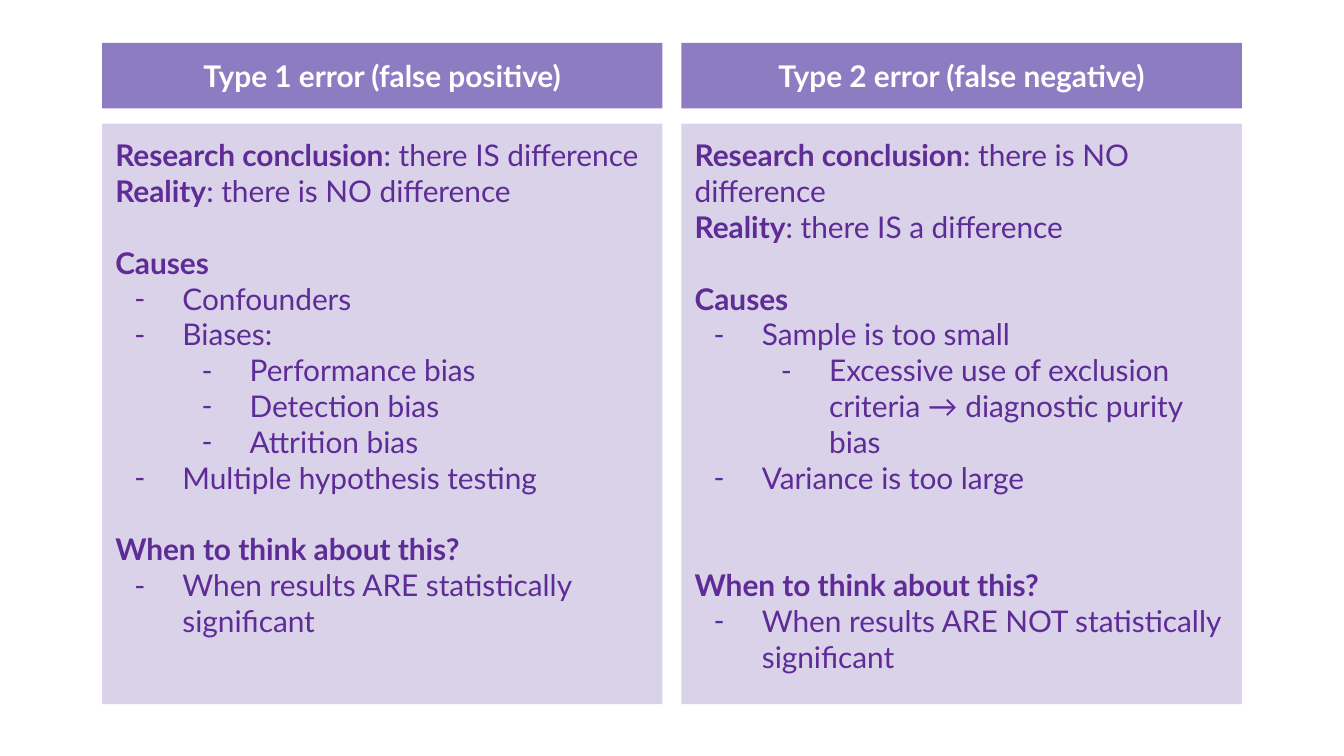
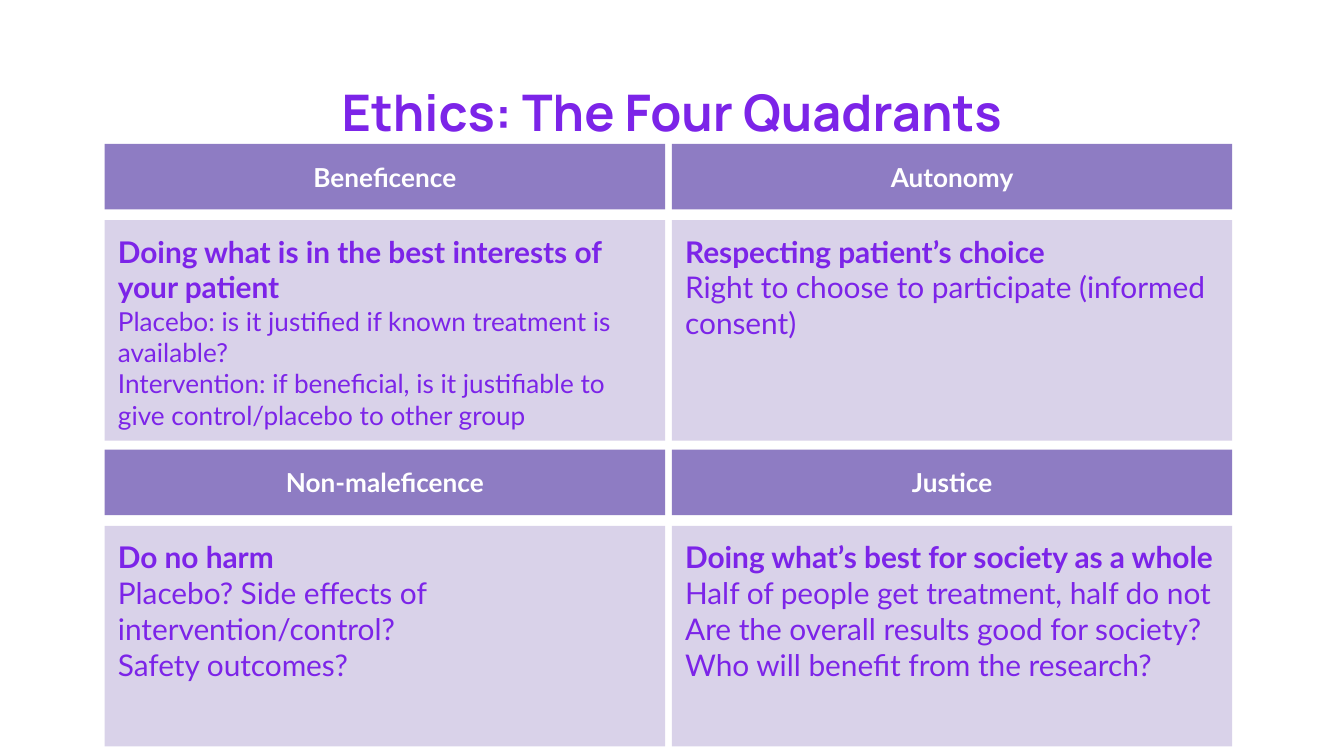
"""Builds two slides of paired panels: error types and ethics quadrants."""
from dataclasses import dataclass

from lxml.etree import SubElement
from pptx import Presentation
from pptx.dml.color import RGBColor
from pptx.enum.shapes import MSO_SHAPE as Preset
from pptx.enum.text import MSO_ANCHOR as Anchor, MSO_AUTO_SIZE as AutoSize, PP_ALIGN as Align
from pptx.oxml.ns import qn
from pptx.util import Cm, Pt

COLORS = {
    "band": "8E7CC3",
    "body": "D9D2E9",
    "white": "FFFFFF",
    "deep": "5E2B97",
    "bright": "7C24E8",
}
BODY_FONT, TITLE_FONT = "Lato", "Manrope"
PANEL_WIDTH, BAND_HEIGHT, INSET = 10.59, 1.24, 0.25
INDENT, HANGING = 1.27, 0.91
BLANK_LINE = 19.2


@dataclass(frozen=True)
class Line:
    bold: str = ""
    plain: str = ""
    bullet_level: int = 0
    lines_before: int = 0
    size: int = 16


@dataclass(frozen=True)
class Panel:
    heading: str
    lines: tuple[Line, ...]


@dataclass(frozen=True)
class Grid:
    left: float
    top: float
    column_step: float
    row_step: float
    body_offset: float
    body_height: float
    heading_size: int
    text_color: str


ERROR_GRID = Grid(1.93, 0.81, 10.95, 0, 1.53, 10.97, 16, "deep")
ETHICS_GRID = Grid(1.98, 2.72, 10.72, 5.78, 1.44, 4.17, 14, "bright")

ERROR_PANELS = (
    Panel("Type 1 error (false positive)", (
        Line("Research conclusion", ": there IS difference"),
        Line("Reality", ": there is NO difference"),
        Line("Causes", lines_before=1),
        Line(plain="Confounders", bullet_level=1),
        Line(plain="Biases:", bullet_level=1),
        Line(plain="Performance bias", bullet_level=2),
        Line(plain="Detection bias", bullet_level=2),
        Line(plain="Attrition bias", bullet_level=2),
        Line(plain="Multiple hypothesis testing", bullet_level=1),
        Line("When to think about this?", lines_before=1),
        Line(plain="When results ARE statistically significant", bullet_level=1),
    )),
    Panel("Type 2 error (false negative)", (
        Line("Research conclusion", ": there is NO difference"),
        Line("Reality", ": there IS a difference"),
        Line("Causes", lines_before=1),
        Line(plain="Sample is too small", bullet_level=1),
        Line(plain="Excessive use of exclusion criteria → diagnostic purity bias", bullet_level=2),
        Line(plain="Variance is too large", bullet_level=1),
        Line("When to think about this?", lines_before=2),
        Line(plain="When results ARE NOT statistically significant", bullet_level=1),
    )),
)

ETHICS_PANELS = (
    Panel("Beneficence", (
        Line("Doing what is in the best interests of your patient"),
        Line(plain="Placebo: is it justified if known treatment is available?", size=14),
        Line(plain="Intervention: if beneficial, is it justifiable to give "
                   "control/placebo to other group", size=14),
    )),
    Panel("Autonomy", (
        Line("Respecting patient’s choice"),
        Line(plain="Right to choose to participate (informed consent)"),
    )),
    Panel("Non-maleficence", (
        Line("Do no harm"),
        Line(plain="Placebo? Side effects of intervention/control?"),
        Line(plain="Safety outcomes?"),
    )),
    Panel("Justice", (
        Line("Doing what’s best for society as a whole"),
        Line(plain="Half of people get treatment, half do not"),
        Line(plain="Are the overall results good for society?"),
        Line(plain="Who will benefit from the research?"),
    )),
)


def format_run(run, size: int, color: str, bold: bool, font_name: str = BODY_FONT) -> None:
    """Set the font of one run."""
    run.font.name = font_name
    run.font.size = Pt(size)
    run.font.bold = bold
    run.font.color.rgb = RGBColor.from_string(COLORS[color])


def prepare_frame(text_frame, anchor: Anchor) -> None:
    """Give a text frame its insets, wrapping and anchor."""
    text_frame.word_wrap = True
    text_frame.auto_size = AutoSize.NONE
    text_frame.vertical_anchor = anchor
    text_frame.margin_left = text_frame.margin_right = Cm(INSET)
    text_frame.margin_top = text_frame.margin_bottom = Cm(INSET)


def add_dash(paragraph, level: int, color: str) -> None:
    """Turn a paragraph into a hanging dash item."""
    paragraph.level = level - 1
    properties = paragraph._p.get_or_add_pPr()
    properties.set("marL", str(Cm(INDENT * level)))
    properties.set("indent", str(-Cm(HANGING)))
    bullet_color = SubElement(properties, qn("a:buClr"))
    SubElement(bullet_color, qn("a:srgbClr"), val=COLORS[color])
    SubElement(properties, qn("a:buFont"), typeface=BODY_FONT)
    SubElement(properties, qn("a:buChar"), char="-")


def add_box(slide, left: float, top: float, height: float, fill: str, anchor: Anchor):
    """Draw a flat rectangle one panel wide and return its text frame."""
    shape = slide.shapes.add_shape(
        Preset.RECTANGLE, Cm(left), Cm(top), Cm(PANEL_WIDTH), Cm(height))
    shape.shadow.inherit = False
    shape.fill.solid()
    shape.fill.fore_color.rgb = RGBColor.from_string(COLORS[fill])
    shape.line.fill.background()
    prepare_frame(shape.text_frame, anchor)
    return shape.text_frame


def fill_lines(text_frame, lines: tuple[Line, ...], color: str) -> None:
    """Write the lines of a panel body."""
    for index, line in enumerate(lines):
        paragraph = text_frame.add_paragraph() if index else text_frame.paragraphs[0]
        paragraph.alignment = Align.LEFT
        if line.bullet_level:
            add_dash(paragraph, line.bullet_level, color)
        if line.lines_before:
            paragraph.space_before = Pt(BLANK_LINE * line.lines_before)
        for text, bold in ((line.bold, True), (line.plain, False)):
            if text:
                run = paragraph.add_run()
                run.text = text
                format_run(run, line.size, color, bold)


def add_panels(slide, panels: tuple[Panel, ...], grid: Grid) -> None:
    """Place panels row by row in two columns."""
    for index, panel in enumerate(panels):
        row, column = divmod(index, 2)
        left = grid.left + column * grid.column_step
        top = grid.top + row * grid.row_step
        heading = add_box(slide, left, top, BAND_HEIGHT, "band", Anchor.MIDDLE)
        heading.text = panel.heading
        heading.paragraphs[0].alignment = Align.CENTER
        format_run(heading.paragraphs[0].runs[0], grid.heading_size, "white", True)
        body = add_box(slide, left, top + grid.body_offset, grid.body_height, "body", Anchor.TOP)
        fill_lines(body, panel.lines, grid.text_color)


def set_title(slide, text: str) -> None:
    """Move and format the title placeholder."""
    title = slide.shapes.title
    title.left, title.top, title.width, title.height = Cm(0.86), Cm(1.24), Cm(23.67), Cm(1.73)
    prepare_frame(title.text_frame, Anchor.MIDDLE)
    title.text_frame.text = text
    paragraph = title.text_frame.paragraphs[0]
    paragraph.alignment = Align.CENTER
    format_run(paragraph.runs[0], 27, "bright", True, TITLE_FONT)


def main() -> None:
    """Build and save the presentation."""
    presentation = Presentation()
    presentation.slide_width, presentation.slide_height = Cm(25.4), Cm(14.29)
    title_only, blank = presentation.slide_layouts[5], presentation.slide_layouts[6]

    error_slide = presentation.slides.add_slide(blank)
    add_panels(error_slide, ERROR_PANELS, ERROR_GRID)

    ethics_slide = presentation.slides.add_slide(title_only)
    set_title(ethics_slide, "Ethics: The Four Quadrants")
    add_panels(ethics_slide, ETHICS_PANELS, ETHICS_GRID)

    presentation.save("out.pptx")


if __name__ == "__main__":
    main()
